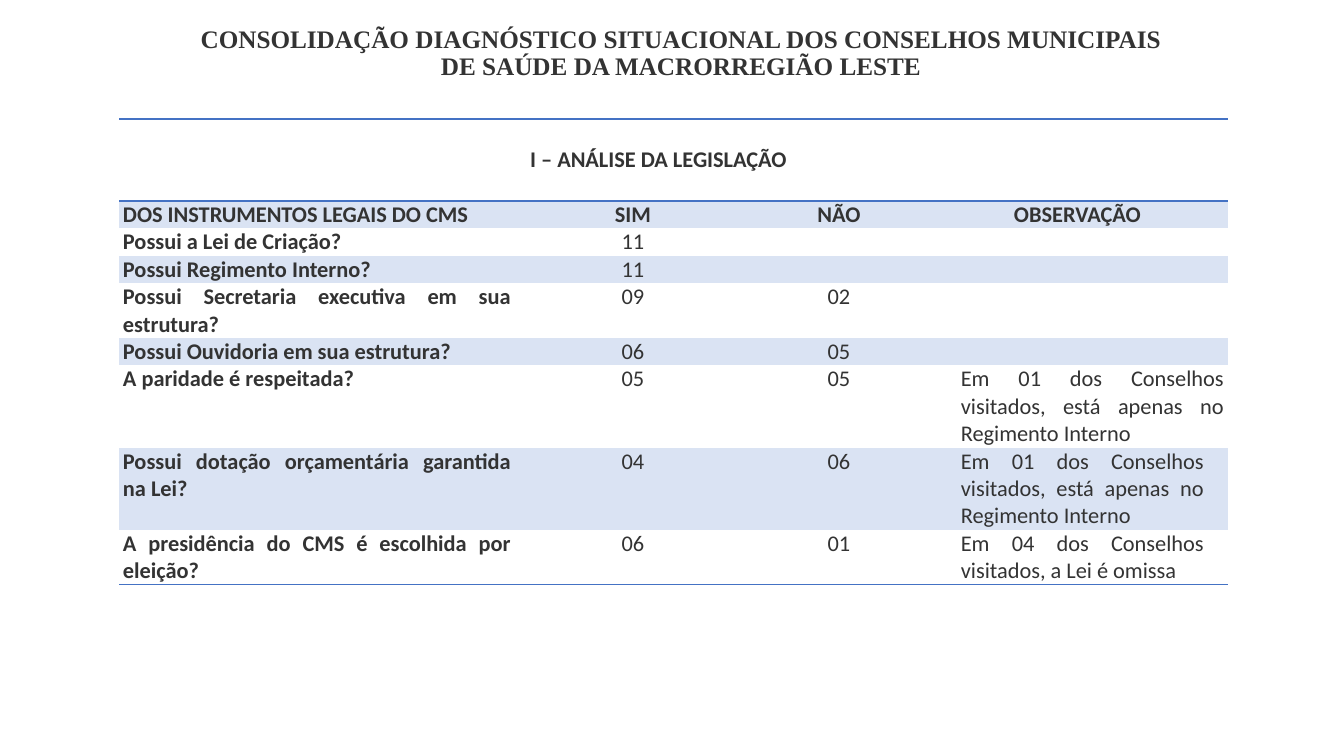
import pptx
import pptx.util
import pptx.dml.color
import pptx.enum.text
import pptx.oxml.ns
from lxml import etree

PX = 914400 / 100.8
COLORS = {"text": "333333", "rule": "4472C4", "band": "DAE3F3"}
ALIGN = pptx.enum.text.PP_ALIGN
ANCHOR = pptx.enum.text.MSO_ANCHOR
NO_STYLE = "{2D5ABB26-0587-4C30-8999-92F81FD0307C}"
TITLE = "CONSOLIDAÇÃO DIAGNÓSTICO SITUACIONAL DOS CONSELHOS MUNICIPAIS DE SAÚDE DA MACRORREGIÃO LESTE"
SECTION = "I – ANÁLISE DA LEGISLAÇÃO"
HEADER = ("DOS INSTRUMENTOS LEGAIS DO CMS", "SIM", "NÃO", "OBSERVAÇÃO")
PARITY_NOTE = "Em 01 dos Conselhos visitados, está apenas no Regimento Interno"
ANSWERS = [
    ("Possui a Lei de Criação?", "11", "", ""),
    ("Possui Regimento Interno?", "11", "", ""),
    ("Possui Secretaria executiva em sua estrutura?", "09", "02", ""),
    ("Possui Ouvidoria em sua estrutura?", "06", "05", ""),
    ("A paridade é respeitada?", "05", "05", PARITY_NOTE),
    ("Possui dotação orçamentária garantida na Lei?", "04", "06", PARITY_NOTE),
    ("A presidência do CMS é escolhida por eleição?", "06", "01",
     "Em 04 dos Conselhos visitados, a Lei é omissa"),
]
COLUMN_WIDTHS = (426, 206, 206, 271)
SECTION_HEIGHT = 82
LINE_HEIGHT = 27
LINE_COUNTS = (1, 1, 1, 2, 1, 3, 3, 2)
INDENT = 30
NOTE_INDENTS = {PARITY_NOTE: 20, ANSWERS[-1][3]: 20}


def px(length):
    return pptx.util.Emu(round(length * PX))


def color(name):
    return pptx.dml.color.RGBColor.from_string(COLORS[name])


def format_runs(paragraph, font_name, size, bold):
    for run in paragraph.runs:
        run.font.name = font_name
        run.font.size = pptx.util.Pt(size)
        run.font.bold = bold
        run.font.color.rgb = color("text")


def add_rule(cell, edge):
    properties = cell._tc.get_or_add_tcPr()
    line = etree.Element(pptx.oxml.ns.qn("a:" + edge), w=str(pptx.util.Pt(1)))
    fill = etree.SubElement(line, pptx.oxml.ns.qn("a:solidFill"))
    etree.SubElement(fill, pptx.oxml.ns.qn("a:srgbClr"), val=COLORS["rule"])
    properties.insert(0, line)


def fill_cell(cell, text, alignment, bold, indent, anchor, banded):
    cell.margin_left = cell.margin_right = px(4)
    cell.margin_top = cell.margin_bottom = 0
    cell.vertical_anchor = anchor
    if banded:
        cell.fill.solid()
        cell.fill.fore_color.rgb = color("band")
    else:
        cell.fill.background()
    paragraph = cell.text_frame.paragraphs[0]
    if text:
        paragraph.text = text
        paragraph.alignment = alignment
        paragraph._p.get_or_add_pPr().set("marR", str(px(indent)))
        format_runs(paragraph, "Calibri", 16, bold)
    else:
        etree.SubElement(paragraph._p, pptx.oxml.ns.qn("a:endParaRPr"), sz="1600")


def place_title(slide, left, top, width, height):
    title = slide.shapes.title
    title.left, title.top, title.width, title.height = map(px, (left, top, width, height))
    title.text_frame.text = TITLE
    title.text_frame.word_wrap = True
    title.text_frame.vertical_anchor = ANCHOR.MIDDLE
    paragraph = title.text_frame.paragraphs[0]
    paragraph.alignment = ALIGN.CENTER
    paragraph.line_spacing = 0.9
    format_runs(paragraph, "Times New Roman", 18, True)


def place_table(slide, left, top):
    heights = [SECTION_HEIGHT] + [LINE_HEIGHT * count for count in LINE_COUNTS]
    rows = [(SECTION, "", "", ""), HEADER] + ANSWERS
    frame = slide.shapes.add_table(
        len(rows), len(COLUMN_WIDTHS), px(left), px(top), px(sum(COLUMN_WIDTHS)), px(sum(heights)))
    table = frame.table
    table.first_row = table.horz_banding = False
    table._tbl.tblPr.find(pptx.oxml.ns.qn("a:tableStyleId")).text = NO_STYLE
    for column, width in zip(table.columns, COLUMN_WIDTHS):
        column.width = px(width)
    for row, height in zip(table.rows, heights):
        row.height = px(height)
    for row_index, texts in enumerate(rows):
        for column_index, text in enumerate(texts):
            cell = table.cell(row_index, column_index)
            is_note = row_index > 1 and column_index == 3
            centered = row_index == 0 or column_index in (1, 2) or (row_index == 1 and column_index == 3)
            indent = NOTE_INDENTS.get(text, INDENT)
            if is_note and rows[row_index][0] == "A paridade é respeitada?":
                indent = 0
            fill_cell(
                cell, text,
                ALIGN.CENTER if centered else ALIGN.JUSTIFY,
                row_index < 2 or column_index == 0,
                indent,
                ANCHOR.MIDDLE if row_index < 2 else ANCHOR.TOP,
                row_index % 2 == 1)
            if row_index in (0, len(rows) - 1):
                add_rule(cell, "lnB")
            if row_index == 0:
                add_rule(cell, "lnT")
    table.cell(0, 0).merge(table.cell(0, len(COLUMN_WIDTHS) - 1))


def main():
    presentation = pptx.Presentation()
    presentation.slide_width = px(1344)
    presentation.slide_height = px(756)
    slide = presentation.slides.add_slide(presentation.slide_layouts[5])
    place_title(slide, 175, 15, 1012, 78)
    place_table(slide, 119, 119)
    presentation.save("out.pptx")


if __name__ == "__main__":
    main()
